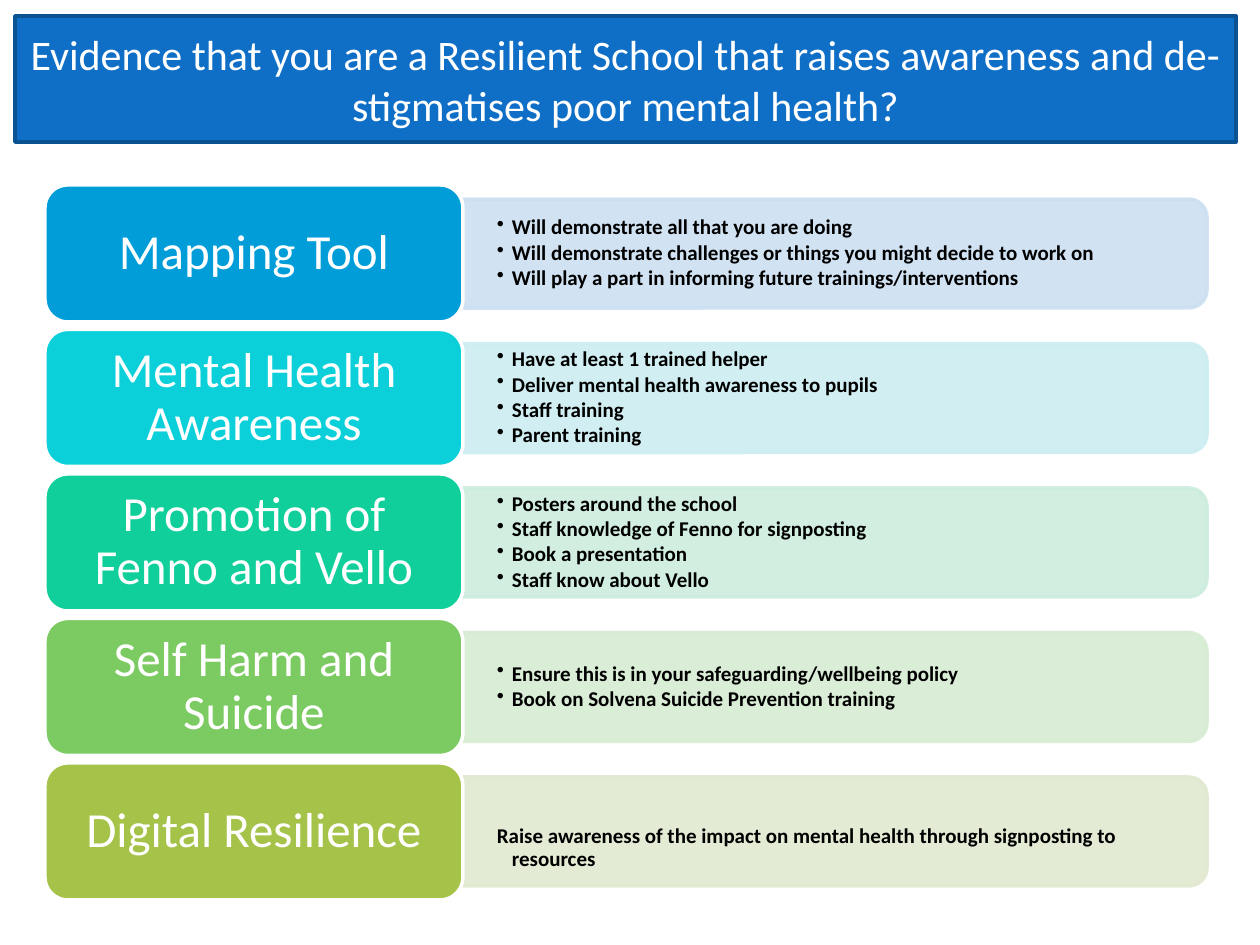
import dataclasses

import lxml.etree
import pptx
import pptx.dml.color
import pptx.enum.shapes
import pptx.enum.text
import pptx.oxml.ns
import pptx.util

SCALE = 914400 / 126
KIND = pptx.enum.shapes.MSO_SHAPE
ALIGN = pptx.enum.text.PP_ALIGN
MIDDLE = pptx.enum.text.MSO_ANCHOR.MIDDLE


@dataclasses.dataclass
class Theme:
    font: str = "Calibri"
    white: str = "FFFFFF"
    ink: str = "000000"
    head: str = "0F6FC6"
    edge: str = "0B5292"
    title: int = 24
    label: int = 28
    body: int = 12
    line: int = 2
    alpha: int = 90


THEME = Theme()

ROWS = [
    ("Mapping Tool", "009DD9", "CCDFF1", [
        "Will demonstrate all that you are doing",
        "Will demonstrate challenges or things you might decide to work on",
        "Will play a part in informing future trainings/interventions"]),
    ("Mental Health Awareness", "0BD0D9", "CCEEF1", [
        "Have at least 1 trained helper",
        "Deliver mental health awareness to pupils",
        "Staff training",
        "Parent training"]),
    ("Promotion of Fenno and Vello", "10CF9B", "CCEDDE", [
        "Posters around the school",
        "Staff knowledge of Fenno for signposting",
        "Book a presentation",
        "Staff know about Vello"]),
    ("Self Harm and Suicide", "7CCA62", "D7ECD3", [
        "Ensure this is in your safeguarding/wellbeing policy",
        "Book on Solvena Suicide Prevention training"]),
    ("Digital Resilience", "A5C249", "E1E9D0", [
        "Raise awareness of the impact on mental health through signposting to resources"]),
]


def px(size):
    return pptx.util.Emu(round(size * SCALE))


def rgb(code):
    return pptx.dml.color.RGBColor.from_string(code)


def apply(item, look):
    for name, value in look.items():
        setattr(item, name, value)


def place(shape, box):
    apply(shape, dict(zip(("left", "top", "width", "height"), map(px, box))))


def paint(shape, fill, edge):
    shape.fill.solid()
    shape.fill.fore_color.rgb = rgb(fill)
    shape.line.color.rgb = rgb(edge)
    shape.line.width = pptx.util.Pt(THEME.line)


def fade(shape):
    for color in shape._element.spPr.iter(pptx.oxml.ns.qn("a:srgbClr")):
        alpha = lxml.etree.SubElement(color, pptx.oxml.ns.qn("a:alpha"))
        alpha.set("val", str(THEME.alpha * 1000))


def write(shape, lines, size, color, bold=False, look=None, frame=None):
    text = shape.text_frame
    apply(text, {"word_wrap": True, "vertical_anchor": MIDDLE,
                 "auto_size": pptx.enum.text.MSO_AUTO_SIZE.NONE, **(frame or {})})
    text.text = "\n".join(lines)
    for para in text.paragraphs:
        apply(para, look or {})
        font = para.runs[0].font
        apply(font, {"name": THEME.font, "size": pptx.util.Pt(size), "bold": bold})
        font.color.rgb = rgb(color)


def indent(para, mark):
    props = para._p.get_or_add_pPr()
    props.set("marL", str(px(15)))
    props.set("indent", str(-px(15)))
    if mark:
        bullet = lxml.etree.SubElement(props, pptx.oxml.ns.qn("a:buChar"))
        bullet.set("char", "•")


def draw_title(slide, box):
    title = slide.shapes.title
    place(title, box)
    paint(title, THEME.head, THEME.edge)
    write(title, ["Evidence that you are a Resilient School that raises awareness "
                  "and de-stigmatises poor mental health?"],
          THEME.title, THEME.white, look={"alignment": ALIGN.CENTER})


def draw_panel(slide, box, tint, lines):
    left, top, width, height = box
    panel = slide.shapes.add_shape(KIND.ROUND_2_SAME_RECTANGLE, 0, 0, 0, 0)
    shift = (width - height) / 2
    place(panel, (left + shift, top - shift, height, width))
    panel.rotation = 90
    panel.shadow.inherit = False
    paint(panel, tint, tint)
    fade(panel)

    listed = len(lines) > 1
    note = slide.shapes.add_textbox(0, 0, 0, 0)
    place(note, (left, top + 5, width - 6, height - 10))
    write(note, lines, THEME.body, THEME.ink, True,
          {"alignment": ALIGN.LEFT, "line_spacing": 0.9,
           "space_after": pptx.util.Pt(1.6)},
          {"margin_left": px(34), "margin_right": px(34),
           "margin_top": px(0 if listed else 34), "margin_bottom": 0})
    for para in note.text_frame.paragraphs:
        indent(para, listed)


def draw_label(slide, box, fill, words):
    label = slide.shapes.add_shape(KIND.ROUNDED_RECTANGLE, 0, 0, 0, 0)
    place(label, box)
    label.shadow.inherit = False
    paint(label, fill, THEME.white)
    write(label, [words], THEME.label, THEME.white,
          look={"alignment": ALIGN.CENTER, "line_spacing": 0.9},
          frame={"margin_left": px(22), "margin_right": px(22),
                 "margin_top": px(14), "margin_bottom": px(14)})


def draw_row(slide, box, row):
    left, top, width, height = box
    words, fill, tint, lines = row
    split = 418
    draw_panel(slide, (left + split, top + 14, width - split, height - 28), tint, lines)
    draw_label(slide, (left, top, split, height), fill, words)


def draw_list(slide, box):
    left, top, width, height = box
    tall = 137
    step = (height - tall) / (len(ROWS) - 1)
    for i, row in enumerate(ROWS):
        draw_row(slide, (left, top + i * step, width, tall), row)


def main():
    deck = pptx.Presentation()
    apply(deck, {"slide_width": px(1260), "slide_height": px(945)})
    slide = deck.slides.add_slide(deck.slide_layouts[5])
    draw_title(slide, (15, 16, 1221, 126))
    draw_list(slide, (45, 185, 1162, 715))
    deck.save("out.pptx")


if __name__ == "__main__":
    main()
